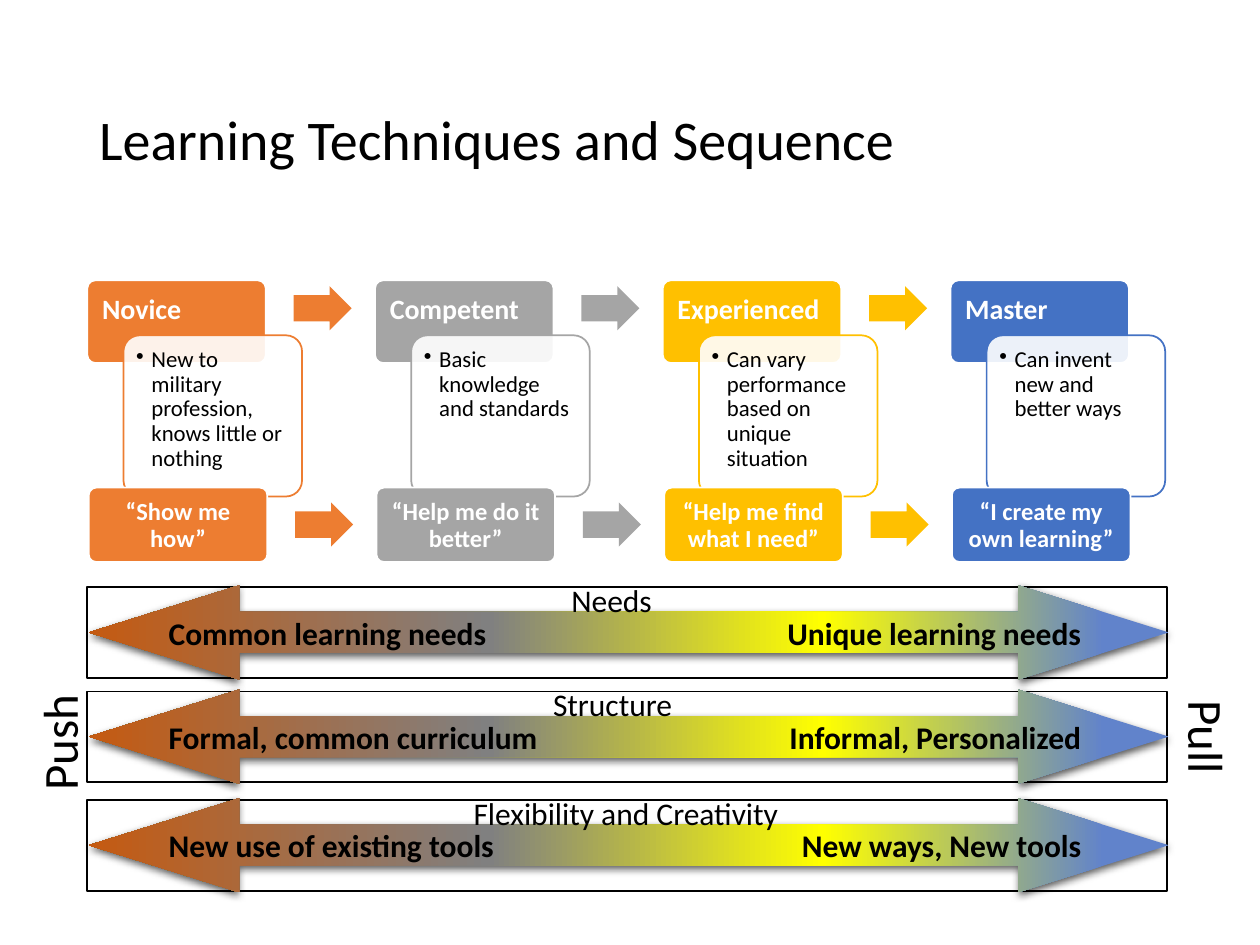
from lxml.etree import SubElement
from pptx import Presentation
from pptx.dml.color import RGBColor
from pptx.enum.shapes import MSO_SHAPE
from pptx.enum.text import MSO_ANCHOR, PP_ALIGN
from pptx.oxml import parse_xml
from pptx.oxml.ns import qn
from pptx.util import Cm, Pt

BLACK = RGBColor(0x00, 0x00, 0x00)
WHITE = RGBColor(0xFF, 0xFF, 0xFF)
ORANGE = RGBColor(0xED, 0x7D, 0x31)
GRAY = RGBColor(0xA5, 0xA5, 0xA5)
GOLD = RGBColor(0xFF, 0xC0, 0x00)
BLUE = RGBColor(0x44, 0x72, 0xC4)
RUST = RGBColor(0xC5, 0x5A, 0x11)
MID = RGBColor(0x80, 0x80, 0x80)
YELLOW = RGBColor(0xFF, 0xFF, 0x00)
SKY = RGBColor(0x61, 0x83, 0xCB)

# Content
TITLE = "Learning Techniques and Sequence"
STAGES = [
    ("Novice", "New to military profession, knows little or nothing",
     "“Show me how”", ORANGE),
    ("Competent", "Basic knowledge and standards",
     "“Help me do it better”", GRAY),
    ("Experienced", "Can vary performance based on unique situation",
     "“Help me find what I need”", GOLD),
    ("Master", "Can invent new and better ways",
     "“I create my own learning”", BLUE),
]
# Caption, left end, right end, top, centre of caption
BARS = [
    ("Needs", "Common learning needs", "Unique learning needs", 11.84, 12.33),
    ("Structure", "Formal, common curriculum", "Informal, Personalized",
     13.94, 12.35),
    ("Flexibility and Creativity", "New use of existing tools",
     "New ways, New tools", 16.13, 12.62),
]
# Text, centre x, centre y, turn
SIDES = [("Push", 1.18, 14.98, 270), ("Pull", 24.35, 14.86, 90)]
STOPS = [(6, SKY), (32, YELLOW), (63, MID), (100, RUST)]

# Layout in cm
LEFT, PITCH, WIDE = 1.76, 5.8, 3.6
SPAN = 21.77
NS = 'xmlns:a="http://schemas.openxmlformats.org/drawingml/2006/main"'


def write(shape, text, size=18, color=BLACK, bold=False, align=PP_ALIGN.LEFT,
          anchor=MSO_ANCHOR.TOP, inset=(0.25, 0.13, 0.25, 0.13), lead=1,
          bullet=False):
    frame = shape.text_frame
    frame.word_wrap = True
    frame.vertical_anchor = anchor
    (frame.margin_left, frame.margin_top,
     frame.margin_right, frame.margin_bottom) = [Cm(n) for n in inset]
    para = frame.paragraphs[0]
    para.alignment = align
    para.line_spacing = lead
    run = para.add_run()
    run.text = text
    font = run.font
    font.name, font.size, font.bold = "Calibri", Pt(size), bold
    font.color.rgb = color
    if bullet:
        props = para._p.get_or_add_pPr()
        props.set("marL", str(Cm(0.31)))
        props.set("indent", str(-Cm(0.31)))
        SubElement(props, qn("a:buChar")).set("char", "•")


def draw(slide, kind, box, fill=None, line=None, adj=()):
    shape = slide.shapes.add_shape(kind, *[Cm(n) for n in box])
    shape.shadow.inherit = False
    if fill is None:
        shape.fill.background()
    else:
        shape.fill.solid()
        shape.fill.fore_color.rgb = fill
    if line is None:
        shape.line.fill.background()
    else:
        shape.line.color.rgb = line
        shape.line.width = Pt(1)
    for i, val in enumerate(adj):
        shape.adjustments[i] = val
    return shape


def label(slide, text, box, **form):
    shape = slide.shapes.add_textbox(*[Cm(n) for n in box])
    write(shape, text, **form)
    return shape


def fade(shape, pct):
    color = shape.fill._xPr.find(qn("a:solidFill"))[0]
    SubElement(color, qn("a:alpha")).set("val", str(pct * 1000))


def blend(shape):
    # Four-stop gradient and soft shadow
    props = shape._element.spPr
    stops = "".join(f'<a:gs pos="{pos * 1000}"><a:srgbClr val="{rgb}"/></a:gs>'
                    for pos, rgb in STOPS)
    grad = parse_xml(f'<a:gradFill {NS} rotWithShape="1"><a:gsLst>{stops}'
                     '</a:gsLst><a:lin ang="10800000" scaled="0"/></a:gradFill>')
    props.replace(props.find(qn("a:noFill")), grad)
    glow = parse_xml(f'<a:outerShdw {NS} blurRad="{Pt(4.5)}" dist="{Pt(1.5)}" '
                     'dir="5400000" rotWithShape="0"><a:srgbClr val="000000">'
                     '<a:alpha val="63000"/></a:srgbClr></a:outerShdw>')
    props.find(qn("a:effectLst")).append(glow)


def stage(slide, i, head, body, quote, color):
    x = LEFT + i * PITCH
    tab = draw(slide, MSO_SHAPE.ROUNDED_RECTANGLE, (x, 5.65, WIDE, 1.67),
               color, WHITE, [0.1])
    write(tab, head, size=16, color=WHITE, bold=True, lead=0.9,
          inset=(0.25, 0.25, 0, 0))
    card = draw(slide, MSO_SHAPE.ROUNDED_RECTANGLE,
                (x + 0.73, 6.76, WIDE, 3.25), WHITE, color, [0.1])
    fade(card, 90)
    write(card, body, size=13, lead=0.9, inset=(0.16,) * 4, bullet=True)
    foot = draw(slide, MSO_SHAPE.ROUNDED_RECTANGLE,
                (x + 0.03, 9.83, WIDE, 1.5), color, WHITE, [0.1])
    write(foot, quote, size=14, color=WHITE, bold=True, lead=0.9,
          align=PP_ALIGN.CENTER, inset=(0.2, 0.2, 0.2, 0))
    if i < len(STAGES) - 1:
        for dx, y in [(4.16, 5.77), (4.19, 10.13)]:
            draw(slide, MSO_SHAPE.RIGHT_ARROW, (x + dx, y, 1.17, 0.89),
                 color, adj=[0.6, 0.5])


def bar(slide, name, start, end, y, mid):
    draw(slide, MSO_SHAPE.RECTANGLE, (LEFT, y, SPAN, 1.83), line=BLACK)
    arrow = draw(slide, MSO_SHAPE.LEFT_RIGHT_ARROW,
                 (LEFT + 0.03, y - 0.04, SPAN, 1.9), adj=[0.435, 1.597])
    blend(arrow)
    for text, x, side in [(start, 3.4, PP_ALIGN.LEFT),
                          (end, 12.8, PP_ALIGN.RIGHT)]:
        label(slide, text, (x, y + 0.4, 9, 1.02), bold=True, align=side,
              anchor=MSO_ANCHOR.MIDDLE, inset=(0, 0, 0, 0))
    label(slide, name, (mid - 4, y - 0.26, 8, 1.02), align=PP_ALIGN.CENTER)


def main():
    deck = Presentation()
    deck.slide_width, deck.slide_height = Cm(25.4), Cm(19.05)
    slide = deck.slides.add_slide(deck.slide_layouts[5])

    # Title
    title = slide.shapes.title
    title.left, title.top, title.width, title.height = [
        Cm(n) for n in (1.75, 1.02, 21.9, 3.68)]
    write(title, TITLE, size=32, anchor=MSO_ANCHOR.MIDDLE, lead=0.9)

    # Stages, bars and side words
    for i, item in enumerate(STAGES):
        stage(slide, i, *item)
    for item in BARS:
        bar(slide, *item)
    for text, x, y, turn in SIDES:
        side = label(slide, text, (x - 2.3, y - 0.73, 4.6, 1.45), size=28,
                     align=PP_ALIGN.CENTER)
        side.rotation = turn

    deck.save("out.pptx")


if __name__ == "__main__":
    main()
